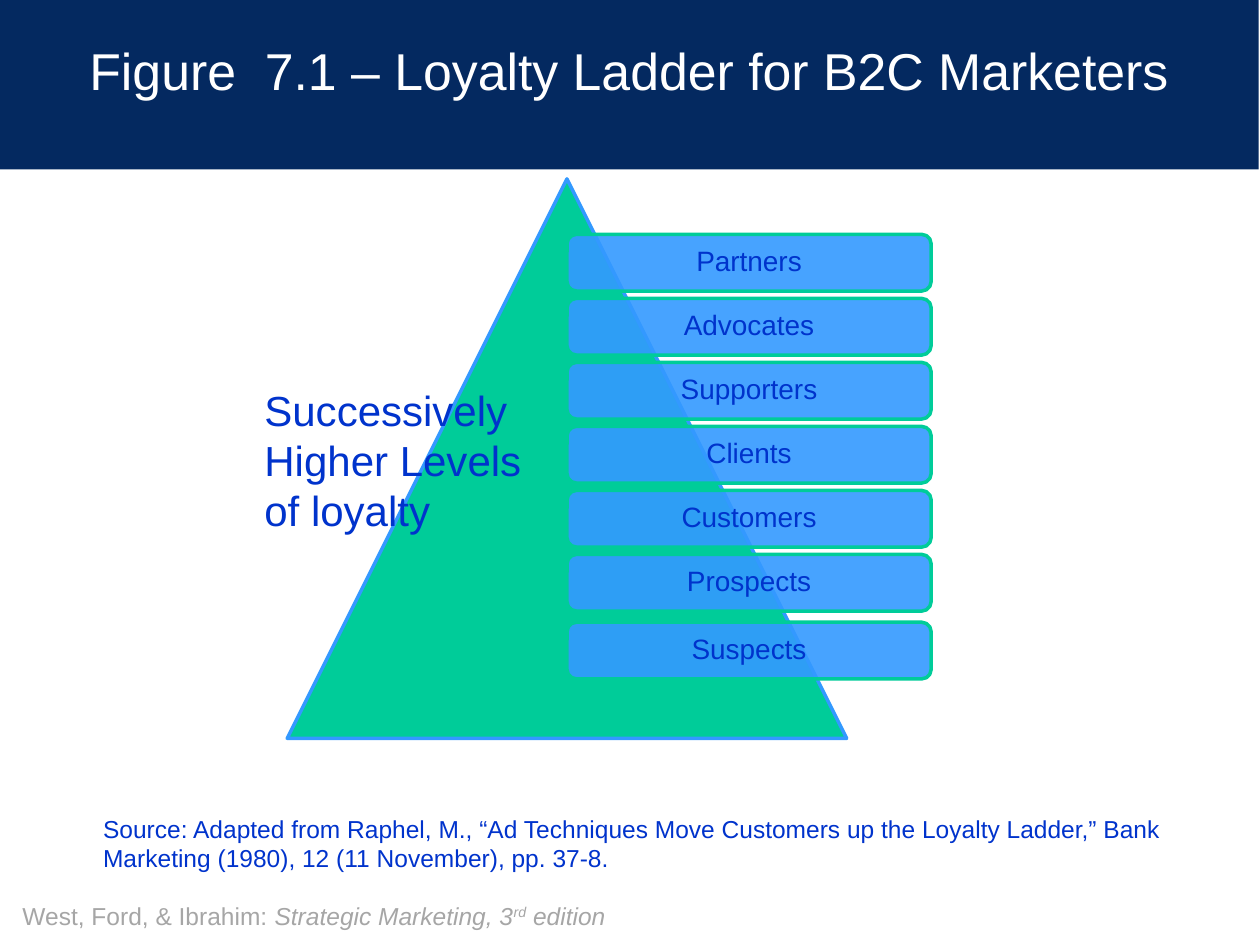
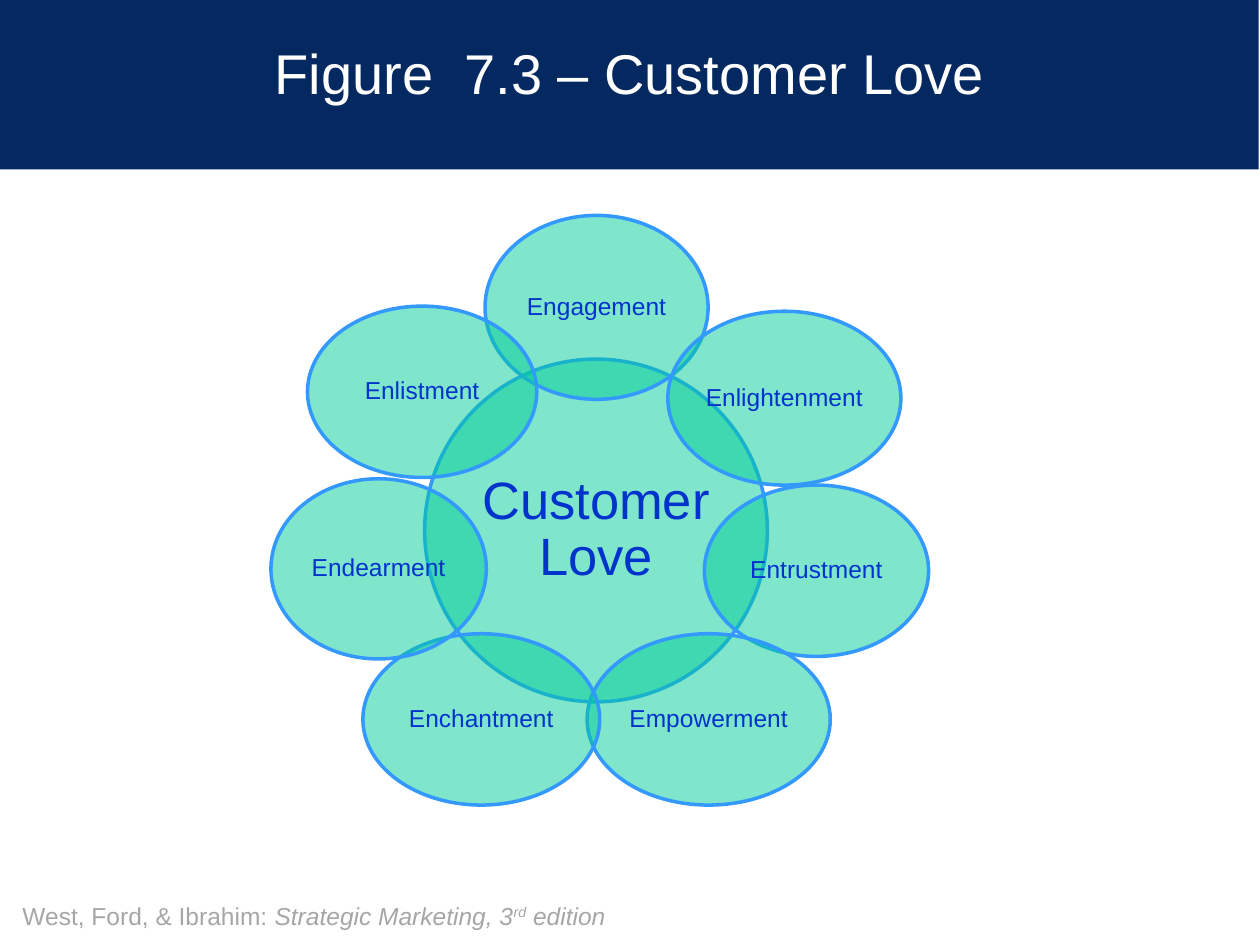
"""Build two marketing figures: the loyalty ladder and the customer love circles."""
from lxml.etree import SubElement
from pptx import Presentation
from pptx.dml.color import RGBColor
from pptx.enum.shapes import MSO_SHAPE as Preset
from pptx.enum.text import MSO_ANCHOR as Anchor, PP_ALIGN as Align
from pptx.oxml.ns import qn
from pptx.util import Inches, Pt

COLOURS = {
    "band": "042960",
    "title": "FFFFFF",
    "footer": "A6A6A6",
    "text": "0033CC",
    "green": "00CC99",
    "blue": "3399FF",
}
FONT = "Arial"
PLAIN, ITALIC, RAISED = "plain", "italic", "raised"
FOOTER = [
    ("West, Ford, & Ibrahim: ", PLAIN),
    ("Strategic Marketing, 3", ITALIC),
    ("rd", RAISED),
    (" edition", ITALIC),
]
TITLES = [
    ("Figure  7.1 – Loyalty Ladder for B2C Marketers", 29.6),
    ("Figure  7.3 – Customer Love", 32),
]

presentation = Presentation()
presentation.slide_width, presentation.slide_height = Inches(10), Inches(7.5)
COLUMN = presentation.slide_width / 100
ROW = presentation.slide_height / 75


def add_figure(slide, preset, box, fill, line=None, opacity=100):
    """Add a preset shape whose box is given in grid columns and rows."""
    left, top, width, height = box
    shape = slide.shapes.add_shape(
        preset, int(left * COLUMN), int(top * ROW), int(width * COLUMN), int(height * ROW))
    shape.shadow.inherit = False
    shape.fill.solid()
    shape.fill.fore_color.rgb = RGBColor.from_string(COLOURS[fill])
    if opacity < 100:
        colour = shape.fill._xPr.find(qn("a:solidFill"))[0]
        SubElement(colour, qn("a:alpha")).set("val", str(opacity * 1000))
    if line:
        shape.line.color.rgb = RGBColor.from_string(COLOURS[line])
        shape.line.width = Pt(2)
    else:
        shape.line.fill.background()
    return shape


def add_text(slide, runs, size, colour="text", box=None, shape=None, align=Align.LEFT, inset=None):
    """Write runs into a shape, or into a new text box on the grid."""
    if shape is None:
        left, top, width, height = box
        shape = slide.shapes.add_textbox(
            int(left * COLUMN), int(top * ROW), int(width * COLUMN), int(height * ROW))
    frame = shape.text_frame
    frame.word_wrap = True
    frame.vertical_anchor = Anchor.TOP if box else Anchor.MIDDLE
    paragraph = frame.paragraphs[0]
    paragraph.alignment = align
    if inset is not None:
        frame.margin_left = frame.margin_right = Inches(inset)
        frame.margin_top = frame.margin_bottom = Inches(inset)
        paragraph.line_spacing = 0.9
    for text, style in runs:
        run = paragraph.add_run()
        run.text = text
        run.font.name = FONT
        run.font.size = Pt(size)
        run.font.italic = style != PLAIN
        run.font.color.rgb = RGBColor.from_string(COLOURS[colour])
        if style == RAISED:
            run._r.get_or_add_rPr().set("baseline", "30000")


slides = []
for title, size in TITLES:
    slide = presentation.slides.add_slide(presentation.slide_layouts[6])
    add_figure(slide, Preset.RECTANGLE, (-0.1, 0, 100, 13.45), "band")
    add_text(slide, FOOTER, 14, "footer", (0.8, 71, 58.6, 3.4))
    add_text(slide, [(title, PLAIN)], size, "title", (5, 2.6, 90, 10.8), align=Align.CENTER)
    slides.append(slide)
ladder_slide, love_slide = slides

source = ("Source: Adapted from Raphel, M., “Ad Techniques Move Customers up the Loyalty "
          "Ladder,” Bank Marketing (1980), 12 (11 November), pp. 37-8.")
add_text(ladder_slide, [(source, PLAIN)], 14, box=(7.2, 64.1, 86.7, 5.7))

add_figure(ladder_slide, Preset.ISOSCELES_TRIANGLE, (22.8, 14.2, 44.4, 44.4), "green", "blue")
RUNGS = ["Partners", "Advocates", "Supporters", "Clients", "Customers", "Prospects", "Suspects"]
FIRST_RUNG, RUNG_STEP, BOTTOM_GAP = 18.6, 5.08, 0.3
for index, rung in enumerate(RUNGS):
    top = FIRST_RUNG + index * RUNG_STEP + (BOTTOM_GAP if rung == RUNGS[-1] else 0)
    bar = add_figure(ladder_slide, Preset.ROUNDED_RECTANGLE, (45, top, 28.9, 4.5),
                     "blue", "green", 90)
    add_text(ladder_slide, [(rung, PLAIN)], 16, shape=bar, align=Align.CENTER, inset=0.07)
add_text(ladder_slide, [("Successively Higher Levels of loyalty", PLAIN)], 24,
         box=(20, 30, 22.5, 13))

CIRCLES = [
    ("Customer Love", 30, 0.04, (33.7, 28.5, 27.2, 27.2)),
    ("Engagement", 14, 0.02, (38.5, 17.1, 17.7, 14.6)),
    ("Enlightenment", 14, 0.02, (53, 24.7, 18.5, 13.8)),
    ("Entrustment", 14, 0.02, (55.9, 38.5, 17.8, 13.6)),
    ("Empowerment", 14, 0.02, (46.6, 50.3, 19.3, 13.6)),
    ("Enchantment", 14, 0.02, (28.8, 50.3, 18.8, 13.6)),
    ("Endearment", 14, 0.02, (21.5, 38, 17.1, 14.3)),
    ("Enlistment", 14, 0.02, (24.4, 24.3, 18.2, 13.6)),
]
for label, size, inset, box in CIRCLES:
    circle = add_figure(love_slide, Preset.OVAL, box, "green", "blue", 50)
    add_text(love_slide, [(label, PLAIN)], size, shape=circle, align=Align.CENTER, inset=inset)

presentation.save("out.pptx")
